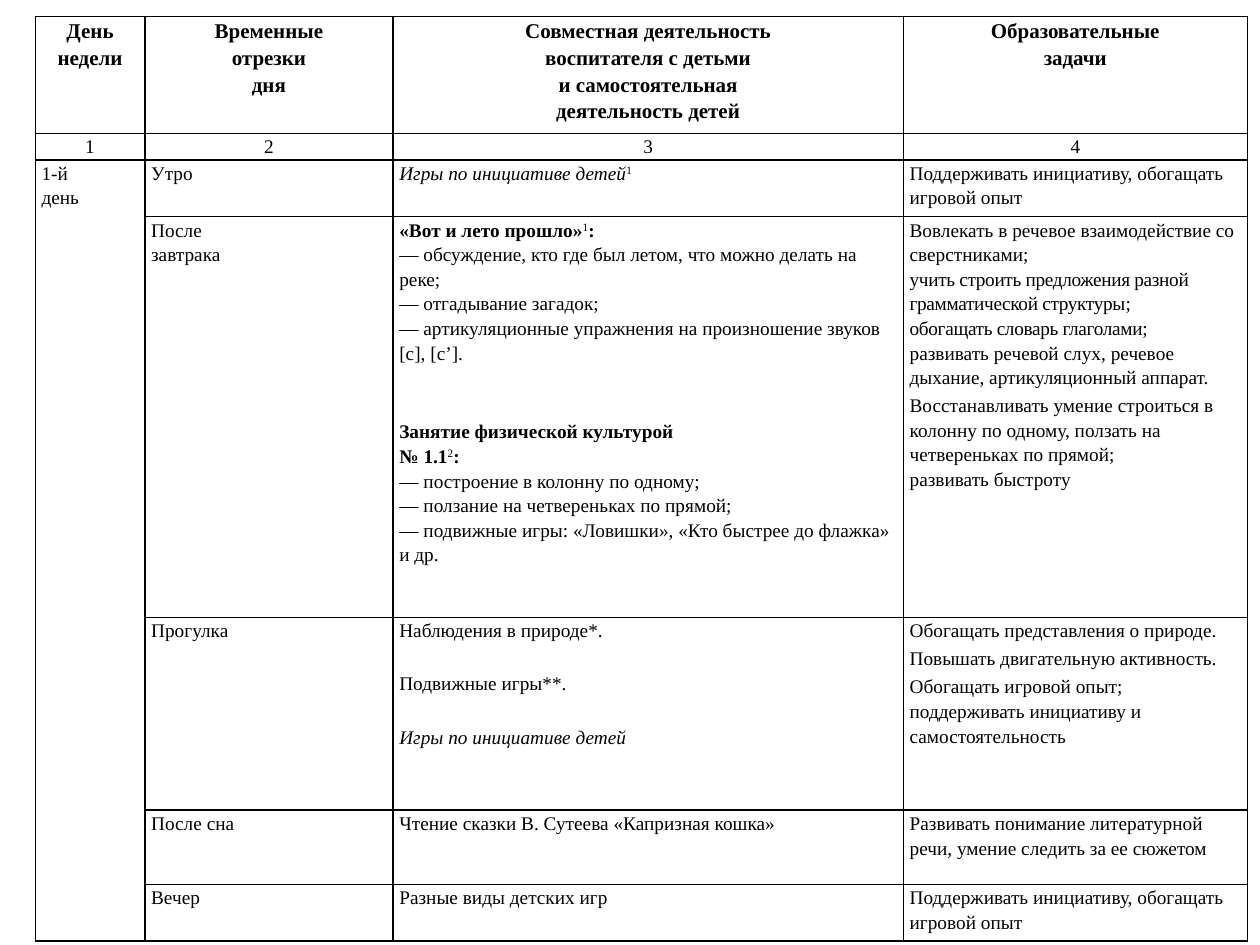
from dataclasses import dataclass, field

from lxml import etree
from pptx import Presentation
from pptx.dml.color import RGBColor
from pptx.enum.text import PP_ALIGN
from pptx.oxml.ns import qn
from pptx.util import Inches, Pt

CENTER, LEFT = PP_ALIGN.CENTER, PP_ALIGN.LEFT
COLORS = {"ink": "000000", "paper": "FFFFFF"}
BOLD, ITALIC, RAISED, TIGHT = "bold", "italic", "raised", "tight"
RUN_ATTRIBUTES = {
    BOLD: ("b", "1"),
    ITALIC: ("i", "1"),
    RAISED: ("baseline", "30000"),
    TIGHT: ("spc", "-20"),
}


@dataclass
class Para:
    spans: list
    before: float = 1


@dataclass
class SlideBuilder:
    slide: object
    font: str = "Times New Roman"
    body_size: int = 11
    header_size: int = 12
    line_spacing: float = 1.15
    border_width: int = 1
    colors: dict = field(default_factory=lambda: COLORS)

    def span(self, paragraph, text, style=None):
        for index, line in enumerate(text.split("\n")):
            if index:
                paragraph.add_line_break()
            if line:
                run = paragraph.add_run()
                run.text = line
                if style:
                    run._r.get_or_add_rPr().set(*RUN_ATTRIBUTES[style])

    def paragraph(self, paragraph, content, align, header):
        paragraph.alignment = align
        paragraph.line_spacing = self.line_spacing
        paragraph.space_before = Pt(content.before)
        paragraph.space_after = Pt(1)
        font = paragraph.font
        font.name = self.font
        font.size = Pt(self.header_size if header else self.body_size)
        font.bold = header
        font.color.rgb = RGBColor.from_string(self.colors["ink"])
        for span in content.spans:
            self.span(paragraph, *([span] if isinstance(span, str) else span))

    def borders(self, cell):
        properties = cell._tc.get_or_add_tcPr()
        for side in ("lnL", "lnR", "lnT", "lnB"):
            line = etree.SubElement(properties, qn(f"a:{side}"), w=str(Pt(self.border_width)))
            fill = etree.SubElement(line, qn("a:solidFill"))
            etree.SubElement(fill, qn("a:srgbClr"), val=self.colors["ink"])

    def cell(self, cell, content, align, header):
        cell.margin_left = cell.margin_right = Inches(0.05)
        cell.margin_top = cell.margin_bottom = 0
        self.borders(cell)
        cell.fill.solid()
        cell.fill.fore_color.rgb = RGBColor.from_string(self.colors["paper"])
        paragraphs = [Para([content])] if isinstance(content, str) else content
        for index, item in enumerate(paragraphs):
            frame = cell.text_frame
            paragraph = frame.add_paragraph() if index else frame.paragraphs[0]
            self.paragraph(paragraph, item, align, header)

    def table(self, left, top, widths, heights, rows):
        frame = self.slide.shapes.add_table(
            len(rows), len(widths), Inches(left), Inches(top),
            Inches(sum(widths)), Inches(sum(heights)),
        )
        table = frame.table
        table.first_row = table.horz_banding = False
        for column, width in zip(table.columns, widths):
            column.width = Inches(width)
        for row, height in zip(table.rows, heights):
            row.height = Inches(height)
        for row_index, contents in enumerate(rows):
            align = CENTER if row_index < 2 else LEFT
            for column_index, content in enumerate(contents):
                cell = table.cell(row_index, column_index)
                self.cell(cell, content, align, row_index == 0)
        return table


SUPPORT = "Поддерживать инициативу, обогащать игровой опыт"
CHILD_GAMES = ("Игры по инициативе детей", ITALIC)
AFTER_BREAKFAST = [
    Para([
        ("«Вот и лето прошло»", BOLD), ("1", RAISED), (":\n", BOLD),
        "— обсуждение, кто где был летом, что можно делать на реке;\n"
        "— отгадывание загадок;\n"
        "— артикуляционные упражнения на произношение звуков [с], [с’].",
    ]),
    Para([
        ("Занятие физической культурой\n№ 1.1", BOLD), ("2", RAISED), (":\n", BOLD),
        "— построение в колонну по одному;\n"
        "— ползание на четвереньках по прямой;\n"
        "— подвижные игры: «Ловишки», «Кто быстрее до флажка» и др.",
    ], before=30),
]
SPEECH_GOALS = [
    Para([
        "Вовлекать в речевое взаимодействие со сверстниками;\n",
        ("учить строить предложения разной грамматической структуры", TIGHT), ";\n",
        ("обогащать словарь глаголами;\n", TIGHT),
        "развивать речевой слух, речевое дыхание, артикуляционный аппарат.",
    ]),
    Para([
        "Восстанавливать умение строиться в колонну по одному, "
        "ползать на четвереньках по прямой;\nразвивать быстроту",
    ]),
]
WALK = [
    Para(["Наблюдения в природе*."]),
    Para(["Подвижные игры**."], before=15),
    Para([CHILD_GAMES], before=16),
]
WALK_GOALS = [
    Para(["Обогащать представления о природе."]),
    Para(["Повышать двигательную активность."]),
    Para(["Обогащать игровой опыт;\nподдерживать инициативу и самостоятельность"]),
]
ROWS = [
    [
        "День\nнедели",
        "Временные\nотрезки\nдня",
        "Совместная деятельность\nвоспитателя с детьми\n"
        "и самостоятельная\nдеятельность детей",
        "Образовательные\nзадачи",
    ],
    ["1", "2", "3", "4"],
    ["1-й\nдень", "Утро", [Para([CHILD_GAMES, ("1", RAISED)])], SUPPORT],
    ["", "После\nзавтрака", AFTER_BREAKFAST, SPEECH_GOALS],
    ["", "Прогулка", WALK, WALK_GOALS],
    [
        "", "После сна", "Чтение сказки В. Сутеева «Капризная кошка»",
        "Развивать понимание литературной речи, умение следить за ее сюжетом",
    ],
    ["", "Вечер", "Разные виды детских игр", SUPPORT],
]


def main():
    deck = Presentation()
    deck.slide_width, deck.slide_height = Inches(10), Inches(7.5)
    page = SlideBuilder(deck.slides.add_slide(deck.slide_layouts[6]))
    plan = page.table(
        0.28, 0.13,
        widths=[0.87, 1.97, 4.05, 2.73],
        heights=[0.93, 0.21, 0.45, 3.18, 1.53, 0.59, 0.45],
        rows=ROWS,
    )
    plan.cell(2, 0).merge(plan.cell(6, 0))
    deck.save("out.pptx")


if __name__ == "__main__":
    main()
